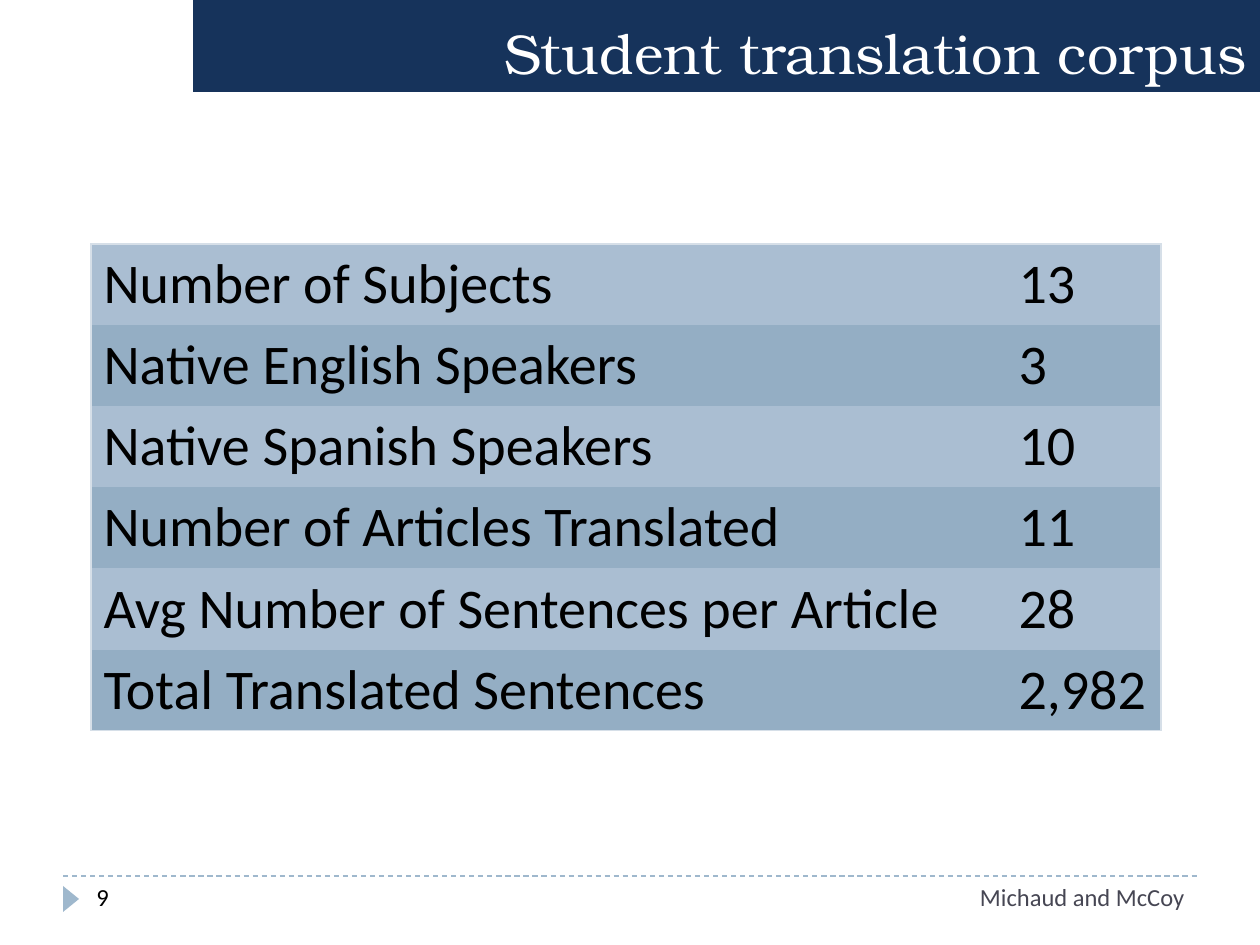
from dataclasses import dataclass
from typing import Any, NamedTuple

from lxml.etree import SubElement
from pptx import Presentation
from pptx.dml.color import RGBColor
from pptx.enum.dml import MSO_LINE
from pptx.enum.shapes import MSO_CONNECTOR, MSO_SHAPE
from pptx.enum.text import MSO_ANCHOR, PP_ALIGN
from pptx.oxml.ns import qn
from pptx.util import Emu, Pt

SCALE = 914400 / 126


@dataclass(frozen=True)
class Theme:
    navy: str = "16335B"
    accent: str = "9FB8CD"
    edge: str = "D6DFE8"
    bands: tuple[str, str] = ("AABED2", "94AEC4")
    white: str = "FFFFFF"
    black: str = "000000"
    slate: str = "464653"
    serif: str = "TeX Gyre Bonum"
    sans: str = "Calibri"
    large: int = 32
    small: int = 14
    hair: float = 0.75


class Box(NamedTuple):
    left: int
    top: int
    width: int
    height: int


class Label(NamedTuple):
    text: str
    box: Box
    color: str
    align: Any


class Row(NamedTuple):
    name: str
    value: str


THEME = Theme()
ROWS = [
    Row("Number of Subjects", "13"),
    Row("Native English Speakers", "3"),
    Row("Native Spanish Speakers", "10"),
    Row("Number of Articles Translated", "11"),
    Row("Avg Number of Sentences per Article", "28"),
    Row("Total Translated Sentences", "2,982"),
]
COLS = (915, 155)
PITCH = 81
GRID = Box(91, 244, sum(COLS), PITCH * len(ROWS))
FOOTER = [
    Label("9", Box(84, 876, 273, 50), THEME.black, PP_ALIGN.LEFT),
    Label("Michaud and McCoy", Box(399, 876, 798, 50), THEME.slate, PP_ALIGN.RIGHT),
]


def px(size: int) -> Emu:
    return Emu(round(size * SCALE))


def place(box: Box) -> list[Emu]:
    return [px(size) for size in box]


def assign(target: Any, values: dict[str, Any]) -> None:
    for name, value in values.items():
        setattr(target, name, value)


def write(frame: Any, text: str, face: str, size: int, color: str,
          align: Any = PP_ALIGN.LEFT) -> None:
    frame.word_wrap = True
    para = frame.paragraphs[0]
    para.alignment = align
    run = para.add_run()
    run.text = text
    assign(run.font, {"name": face, "size": Pt(size), "bold": False})
    run.font.color.rgb = RGBColor.from_string(color)


def draw_shape(slide: Any, kind: Any, box: Box, color: str) -> Any:
    shape = slide.shapes.add_shape(kind, *place(box))
    shape.shadow.inherit = False
    shape.fill.solid()
    shape.fill.fore_color.rgb = RGBColor.from_string(color)
    shape.line.fill.background()
    return shape


def draw_title(slide: Any) -> None:
    bar = draw_shape(slide, MSO_SHAPE.RECTANGLE, Box(193, 0, 1067, 92), THEME.navy)
    bar.text_frame.vertical_anchor = MSO_ANCHOR.BOTTOM
    write(bar.text_frame, "Student translation corpus", THEME.serif,
          THEME.large, THEME.white, PP_ALIGN.RIGHT)


def draw_edges(cell: Any, sides: dict[str, bool]) -> None:
    props = cell._tc.get_or_add_tcPr()
    for index, (side, shown) in enumerate(sides.items()):
        line = props.makeelement(qn(f"a:{side}"), {"w": str(Pt(THEME.hair))})
        props.insert(index, line)
        if shown:
            fill = SubElement(line, qn("a:solidFill"))
            SubElement(fill, qn("a:srgbClr"), val=THEME.edge)
        else:
            SubElement(line, qn("a:noFill"))


def draw_table(slide: Any) -> None:
    table = slide.shapes.add_table(len(ROWS), len(COLS), *place(GRID)).table
    assign(table, {"first_row": False, "horz_banding": False})
    for col, width in zip(table.columns, COLS):
        col.width = px(width)
    for i, row in enumerate(ROWS):
        table.rows[i].height = px(PITCH)
        for j, text in enumerate(row):
            cell = table.cell(i, j)
            cell.fill.solid()
            cell.fill.fore_color.rgb = RGBColor.from_string(THEME.bands[i % 2])
            write(cell.text_frame, text, THEME.sans, THEME.large, THEME.black)
            draw_edges(cell, {
                "lnL": j == 0,
                "lnR": j == len(COLS) - 1,
                "lnT": i == 0,
                "lnB": i == len(ROWS) - 1,
            })


def draw_rule(slide: Any) -> None:
    rule = slide.shapes.add_connector(
        MSO_CONNECTOR.STRAIGHT, *place(Box(63, 876, 1197, 876)))
    rule.line.color.rgb = RGBColor.from_string(THEME.accent)
    assign(rule.line, {"width": Pt(THEME.hair), "dash_style": MSO_LINE.DASH})
    SubElement(rule._element.spPr, qn("a:effectLst"))


def draw_label(slide: Any, label: Label) -> None:
    frame = slide.shapes.add_textbox(*place(label.box)).text_frame
    write(frame, label.text, THEME.sans, THEME.small, label.color, label.align)


def main() -> None:
    deck = Presentation()
    assign(deck, {"slide_width": px(1260), "slide_height": px(945)})
    slide = deck.slides.add_slide(deck.slide_layouts[6])
    draw_rule(slide)
    mark = draw_shape(slide, MSO_SHAPE.ISOSCELES_TRIANGLE,
                      Box(58, 891, 26, 16), THEME.accent)
    mark.rotation = 90
    draw_title(slide)
    draw_table(slide)
    for label in FOOTER:
        draw_label(slide, label)
    deck.save("out.pptx")


if __name__ == "__main__":
    main()
